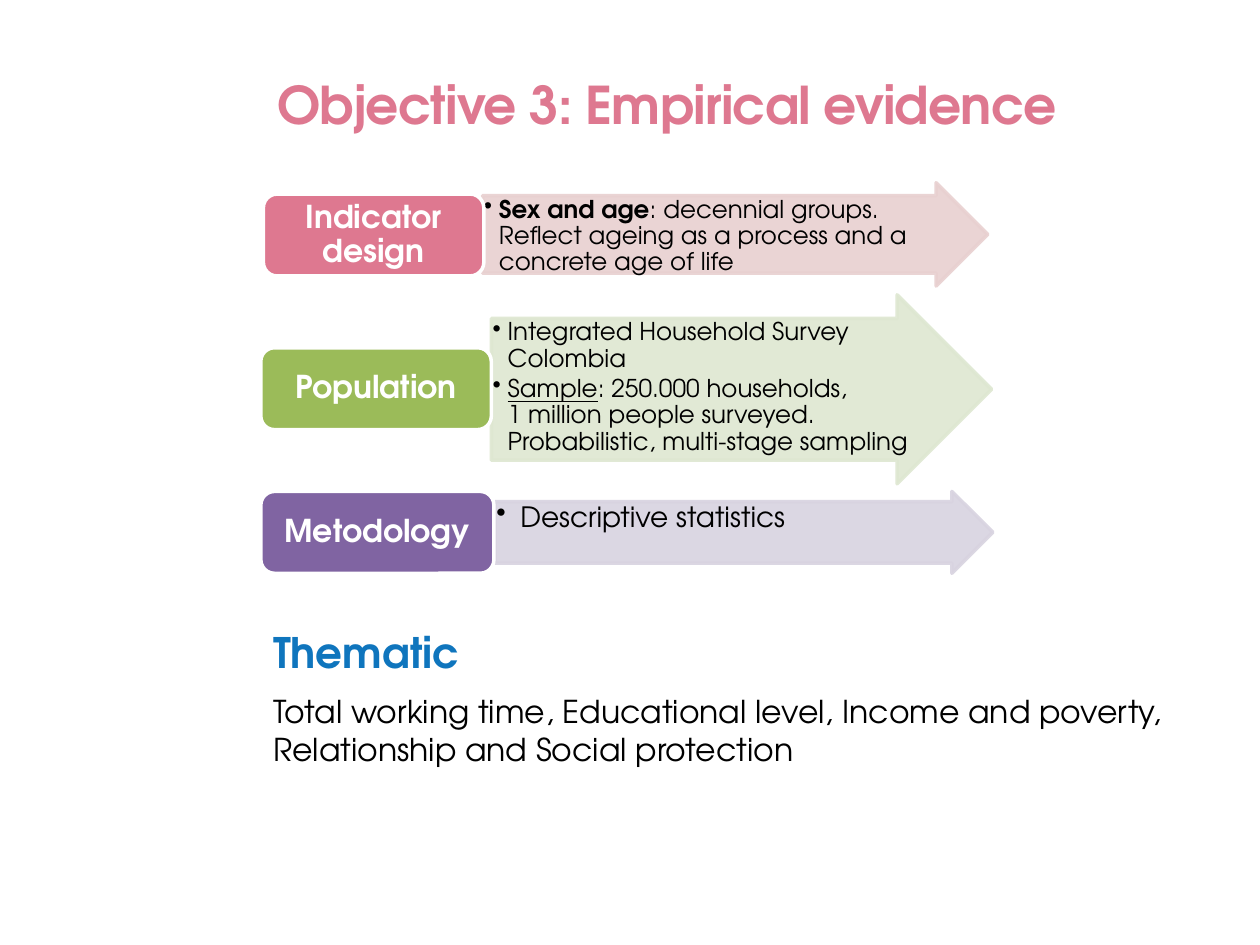
from lxml import etree
from pptx import Presentation
from pptx.dml.color import RGBColor
from pptx.enum.shapes import MSO_SHAPE
from pptx.enum.text import MSO_ANCHOR, PP_ALIGN
from pptx.oxml.ns import qn
from pptx.util import Emu, Pt

ARROW, ROUNDED = MSO_SHAPE.RIGHT_ARROW, MSO_SHAPE.ROUNDED_RECTANGLE
TOP, MIDDLE = MSO_ANCHOR.TOP, MSO_ANCHOR.MIDDLE
LEFT, CENTER = PP_ALIGN.LEFT, PP_ALIGN.CENTER

EMU_PER_PX = 9144  # 100 px to the inch
FONT = "TeX Gyre Adventor"
PINK = RGBColor(0xDE, 0x78, 0x90)
GREEN = RGBColor(0x9B, 0xBB, 0x59)
PURPLE = RGBColor(0x80, 0x64, 0xA2)
PALE_PINK = RGBColor(0xE8, 0xD0, 0xD0)
PALE_GREEN = RGBColor(0xDE, 0xE7, 0xD1)
PALE_PURPLE = RGBColor(0xD8, 0xD3, 0xE0)
BLUE = RGBColor(0x0F, 0x75, 0xBD)
BLACK = RGBColor(0, 0, 0)
WHITE = RGBColor(0xFF, 0xFF, 0xFF)


def px(length):
    return Emu(length * EMU_PER_PX)


class SlideBuilder:
    """Holds the text style and the slide being filled."""

    def __init__(self, slide, font):
        self.slide = slide
        self.font = font

    def format_run(self, run, size, color, bold=False, underline=False):
        run.font.name = self.font
        run.font.size = Pt(size)
        run.font.color.rgb = color
        run.font.bold = bold
        run.font.underline = underline

    def text_box(self, place, paragraphs, line_spacing=1.0, tracking=0):
        """Each paragraph is (text, size, color, bold); tracking is in 1/100 pt."""
        box = self.slide.shapes.add_textbox(*map(px, place))
        frame = box.text_frame
        frame.word_wrap = True
        for index, (text, size, color, bold) in enumerate(paragraphs):
            para = frame.add_paragraph() if index else frame.paragraphs[0]
            para.text = text
            para.line_spacing = line_spacing
            if index:
                frame.paragraphs[index - 1].space_after = Pt(9)
            run = para.runs[0]
            self.format_run(run, size, color, bold)
            if tracking:
                run.font._element.set("spc", str(tracking))

    def shape(self, preset, place, fill, line, margins, anchor):
        shape = self.slide.shapes.add_shape(preset, *map(px, place))
        shape.shadow.inherit = False
        shape.fill.solid()
        shape.fill.fore_color.rgb = fill
        shape.line.color.rgb = line
        shape.line.width = Pt(2)
        frame = shape.text_frame
        frame.word_wrap = True
        frame.vertical_anchor = anchor
        frame.margin_left = frame.margin_right = px(margins[0])
        frame.margin_top = frame.margin_bottom = px(margins[1])
        return shape

    def label(self, place, text, fill):
        shape = self.shape(ROUNDED, place, fill, WHITE, (7, 4), MIDDLE)
        para = shape.text_frame.paragraphs[0]
        para.text = text
        para.alignment = CENTER
        para.line_spacing = 0.9
        self.format_run(para.runs[0], 18, WHITE, bold=True)

    def arrow(self, place, bullets, fill, size, indent):
        """Each bullet is a list of (text, style) runs; "\\n" is a line break."""
        shape = self.shape(ARROW, place, fill, fill, (1, 1), TOP)
        shape.adjustments[0] = 0.75
        for color in shape._element.spPr.iter(qn("a:srgbClr")):
            etree.SubElement(color, qn("a:alpha"), val="90000")
        frame = shape.text_frame
        for index, parts in enumerate(bullets):
            para = frame.add_paragraph() if index else frame.paragraphs[0]
            para.alignment = LEFT
            para.line_spacing = 0.9
            para.space_after = Pt(2)
            properties = para._p.get_or_add_pPr()
            properties.set("marL", str(px(indent)))
            properties.set("indent", str(-px(indent)))
            etree.SubElement(properties, qn("a:buChar"), char="•")
            for text, style in parts:
                for line_index, line in enumerate(text.split("\n")):
                    if line_index:
                        para.add_line_break()
                    run = para.add_run()
                    run.text = line
                    self.format_run(run, size, BLACK, **style)


def main():
    deck = Presentation()
    deck.slide_width, deck.slide_height = px(1000), px(750)
    page = SlideBuilder(deck.slides.add_slide(deck.slide_layouts[6]), FONT)

    page.text_box((210, 68, 661, 45),
                  [("Objective 3: Empirical evidence", 29.7, PINK, True)],
                  line_spacing=0.65, tracking=-50)
    page.text_box((207, 492, 740, 124), [
        ("Thematic", 24, BLUE, True),
        ("Total working time, Educational level, Income and poverty, "
         "Relationship and Social protection", 18, BLACK, False),
    ])

    indicator = [[
        ("Sex and age", {"bold": True}),
        (": decennial groups. Reflect ageing as a process and a "
         "concrete age of life", {}),
    ]]
    population = [
        [("Integrated Household Survey Colombia", {})],
        [("Sample", {"underline": True}),
         (": 250.000 households,\n1 million people surveyed. "
          "Probabilistic, multi-stage sampling", {})],
    ]
    methodology = [[("Descriptive statistics", {})]]

    rows = [
        ("Indicator design", (209, 154, 175, 65), PINK,
         (383, 145, 401, 82), indicator, PALE_PINK, 14, 12),
        ("Population", (207, 276, 183, 65), GREEN,
         (390, 234, 397, 150), population, PALE_GREEN, 14, 12),
        ("Metodology", (207, 390, 185, 65), PURPLE,
         (393, 390, 395, 65), methodology, PALE_PURPLE, 16, 19),
    ]
    for name, label_place, color, arrow_place, bullets, pale, size, indent in rows:
        page.arrow(arrow_place, bullets, pale, size, indent)
        page.label(label_place, name, color)

    deck.save("out.pptx")


if __name__ == "__main__":
    main()
